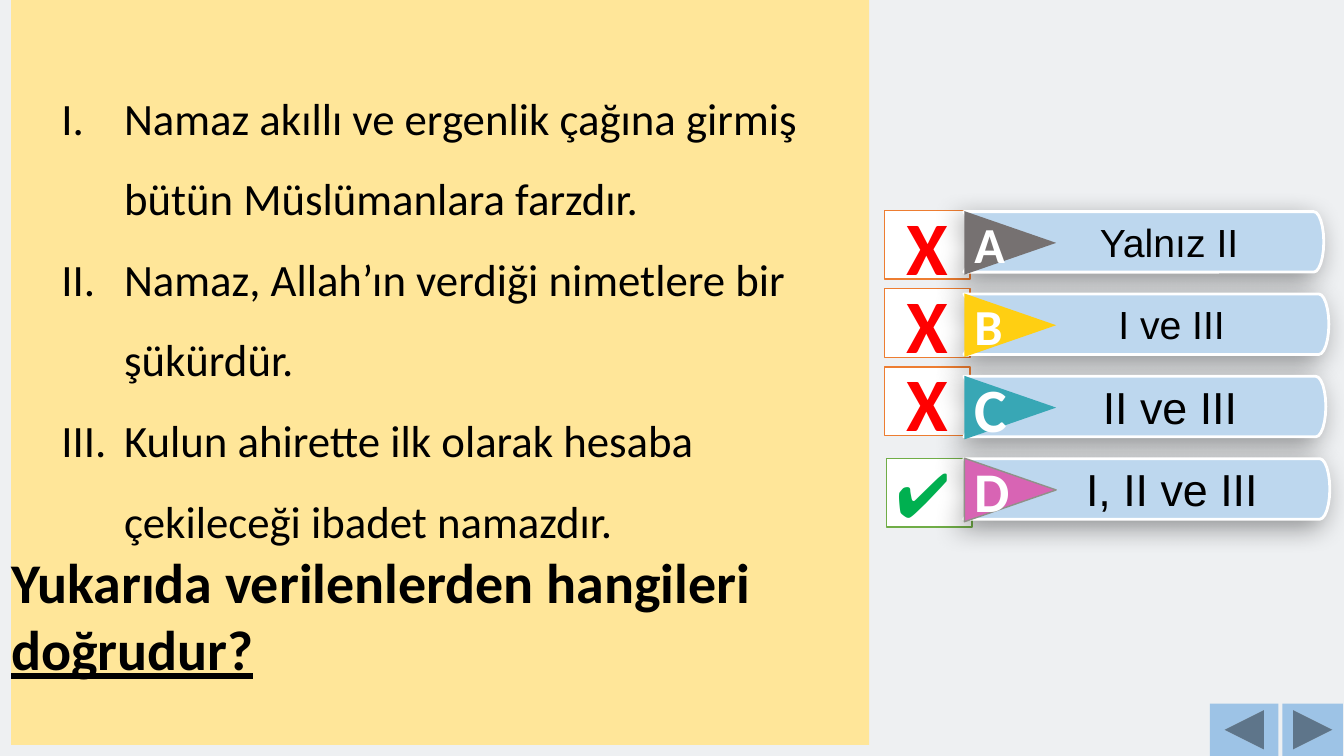
from math import cos, pi, sin

from lxml.etree import SubElement
from pptx import Presentation
from pptx.dml.color import RGBColor
from pptx.enum.shapes import MSO_SHAPE
from pptx.enum.text import MSO_ANCHOR, PP_ALIGN
from pptx.oxml.ns import qn
from pptx.util import Inches, Pt

STATEMENTS = [
    "Namaz akıllı ve ergenlik çağına girmiş bütün Müslümanlara farzdır.",
    "Namaz, Allah’ın verdiği nimetlere bir şükürdür.",
    "Kulun ahirette ilk olarak hesaba çekileceği ibadet namazdır.",
]
QUESTION = ["Yukarıda verilenlerden hangileri ", "doğrudur?"]
# letter, letter size, letter alignment, answer, answer size, bar width, triangle colour, triangle line
OPTIONS = [
    ("A", 36, PP_ALIGN.CENTER, "Yalnız II", 28, 3.57, "gray", None),
    ("B", 36, PP_ALIGN.CENTER, "I ve III", 28, 3.62, "yellow", None),
    ("C", 44, PP_ALIGN.LEFT, "II ve III", 32, 3.59, "teal", None),
    ("D", 40, PP_ALIGN.CENTER, "I, II ve III", 32, 3.63, "pink", "olive"),
]
# sign, size, bold, alignment, sign colour, frame colour, left, top
WRONG = ("X", 54, True, PP_ALIGN.CENTER, "red", "orange", 8.77)
RIGHT = ("✔", 44, False, PP_ALIGN.LEFT, "green", "leaf", 8.79)
MARKS = [(*WRONG, 2.09 + 0.775 * row) for row in range(3)] + [(*RIGHT, 4.55)]
BUTTONS = [
    (MSO_SHAPE.ACTION_BUTTON_BACK_OR_PREVIOUS, 12, 0.68),
    (MSO_SHAPE.ACTION_BUTTON_FORWARD_OR_NEXT, 12.72, 0.6),
]
COLORS = {
    "background": "EEF0F2", "panel": "FFE699", "button": "9DC3E6",
    "bar": "BDD7EE", "white": "FFFFFF", "black": "000000",
    "red": "FF0000", "green": "00B050", "orange": "ED7D31", "leaf": "70AD47",
    "gray": "767171", "yellow": "FFCF12", "teal": "38A7B5", "pink": "D864B4",
    "olive": "909189",
}

SLIDE_WIDTH, SLIDE_HEIGHT = 13.33, 7.5
BAR_LEFT, BAR_TOP, BAR_HEIGHT, BAR_PITCH = 9.56, 2.1, 0.6, 0.817
NOTCH, CAP_WIDTH, CAP_STEPS = 0.18, 0.1, 12
TRIANGLE_WIDTH, TRIANGLE_HEIGHT, TRIANGLE_CENTER = 0.63, 0.91, 10.02
MARK_WIDTH, MARK_HEIGHT = 0.85, 0.68
BUTTON_HEIGHT = 0.52


def color(name):
    return RGBColor.from_string(COLORS[name])


def paint(shape, fill, line=None, line_width=1):
    shape.shadow.inherit = False
    shape.fill.solid()
    shape.fill.fore_color.rgb = color(fill)
    if line:
        shape.line.color.rgb = color(line)
        shape.line.width = Pt(line_width)
    else:
        shape.line.fill.background()


def add_painted(slide, kind, left, top, width, height, fill, line=None):
    shape = slide.shapes.add_shape(
        kind, Inches(left), Inches(top), Inches(width), Inches(height))
    paint(shape, fill, line)
    return shape


def style(paragraph, size, font_color, font_name="Calibri", bold=False, alignment=PP_ALIGN.LEFT):
    paragraph.alignment = alignment
    paragraph.font.size = Pt(size)
    paragraph.font.name = font_name
    paragraph.font.bold = bold
    paragraph.font.color.rgb = color(font_color)


def set_label(shape, text, *styling):
    frame = shape.text_frame
    frame.word_wrap = True
    frame.vertical_anchor = MSO_ANCHOR.MIDDLE
    frame.paragraphs[0].text = text
    style(frame.paragraphs[0], *styling)


def add_bar_shadow(shape):
    effects = shape._element.spPr.find(qn("a:effectLst"))
    shadow = SubElement(effects, qn("a:outerShdw"), blurRad=str(Pt(20)), dist=str(Pt(7)),
                        dir=str(135 * 60000), algn="tr", rotWithShape="0")
    shade = SubElement(shadow, qn("a:srgbClr"), val=COLORS["black"])
    SubElement(shade, qn("a:alpha"), val="40000")


def add_question_panel(slide):
    panel = add_painted(slide, MSO_SHAPE.RECTANGLE, 0.11, 0, 8.51, 7.39, "panel")
    frame = panel.text_frame
    frame.word_wrap = True
    frame.vertical_anchor = MSO_ANCHOR.MIDDLE
    frame.margin_left = frame.margin_right = frame.margin_top = frame.margin_bottom = 0
    for index, statement in enumerate(STATEMENTS):
        paragraph = frame.paragraphs[0] if index == 0 else frame.add_paragraph()
        paragraph.text = statement
        paragraph.line_spacing = 1.5
        properties = paragraph._p.get_or_add_pPr()
        properties.set("marL", str(Inches(1.12)))
        properties.set("indent", str(Inches(-0.62)))
        SubElement(properties, qn("a:buFont"), typeface="+mj-lt")
        SubElement(properties, qn("a:buAutoNum"), type="romanUcPeriod")
        style(paragraph, 32, "black")
    paragraph = frame.add_paragraph()
    for text in QUESTION:
        paragraph.add_run().text = text
    paragraph.runs[-1].font.underline = True
    style(paragraph, 40, "black", "Calibri", True)


def add_bar(slide, top, width):
    """Draw a bar with a notched left end and a rounded right end."""
    cap_left, middle = BAR_LEFT + width - CAP_WIDTH, top + BAR_HEIGHT / 2
    angles = [pi * step / CAP_STEPS - pi / 2 for step in range(CAP_STEPS + 1)]
    points = [(cap_left + CAP_WIDTH * cos(angle), middle + BAR_HEIGHT / 2 * sin(angle))
              for angle in angles]
    points += [(BAR_LEFT, top + BAR_HEIGHT), (BAR_LEFT + NOTCH, middle)]
    builder = slide.shapes.build_freeform(Inches(BAR_LEFT), Inches(top))
    builder.add_line_segments([(Inches(x), Inches(y)) for x, y in points], close=True)
    bar = builder.convert_to_shape()
    paint(bar, "bar", "white", 2)
    add_bar_shadow(bar)
    return bar


def add_option(slide, row, option):
    letter, letter_size, alignment, answer, answer_size, width, fill, line = option
    top = BAR_TOP + BAR_PITCH * row
    bar = add_bar(slide, top, width)
    bar.text_frame.paragraphs[0]._p.get_or_add_pPr().set("marL", str(Inches(0.5)))
    set_label(bar, answer, answer_size, "black", "Arial", False, PP_ALIGN.CENTER)

    triangle = add_painted(
        slide, MSO_SHAPE.ISOSCELES_TRIANGLE, TRIANGLE_CENTER - TRIANGLE_WIDTH / 2,
        top + 0.31 - TRIANGLE_HEIGHT / 2, TRIANGLE_WIDTH, TRIANGLE_HEIGHT, fill, line)
    triangle.rotation = 90
    set_label(triangle, letter, letter_size, "white", "Calibri", True, alignment)
    triangle.text_frame._txBody.bodyPr.set("vert", "vert270")


def main():
    presentation = Presentation()
    presentation.slide_width = Inches(SLIDE_WIDTH)
    presentation.slide_height = Inches(SLIDE_HEIGHT)
    slide = presentation.slides.add_slide(presentation.slide_layouts[6])
    slide.background.fill.solid()
    slide.background.fill.fore_color.rgb = color("background")

    for kind, left, width in BUTTONS:
        add_painted(slide, kind, left, SLIDE_HEIGHT - BUTTON_HEIGHT, width, BUTTON_HEIGHT, "button")
    add_question_panel(slide)
    for sign, size, bold, alignment, sign_color, frame_color, left, top in MARKS:
        mark = add_painted(slide, MSO_SHAPE.RECTANGLE, left, top, MARK_WIDTH, MARK_HEIGHT,
                           "white", frame_color)
        set_label(mark, sign, size, sign_color, "Calibri", bold, alignment)
    for row, option in enumerate(OPTIONS):
        add_option(slide, row, option)
    presentation.save("out.pptx")


if __name__ == "__main__":
    main()
